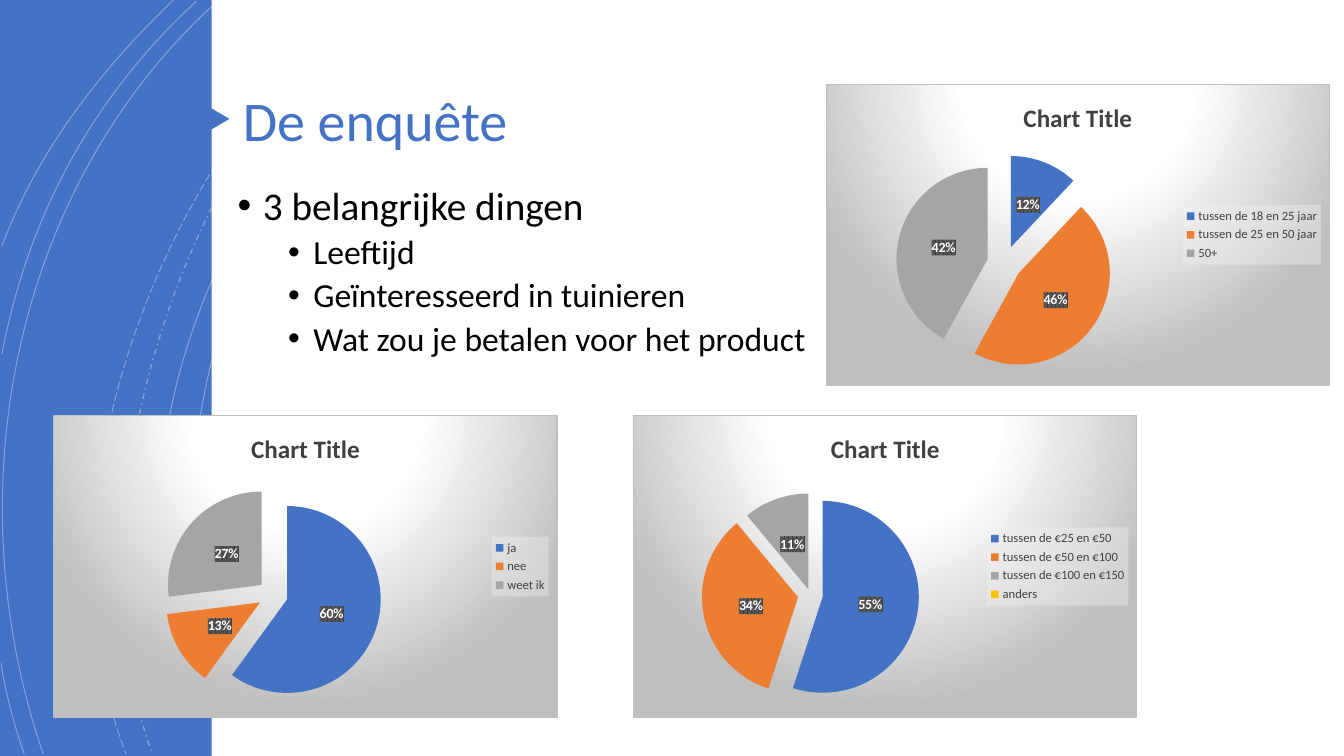
from dataclasses import dataclass

from lxml.etree import SubElement
from pptx import Presentation
from pptx.chart.data import CategoryChartData as Data
from pptx.dml.color import RGBColor as RGB
from pptx.enum.chart import XL_CHART_TYPE as Kind, XL_LABEL_POSITION as Spot
from pptx.enum.chart import XL_LEGEND_POSITION as Side
from pptx.enum.dml import MSO_LINE as Dash
from pptx.enum.shapes import MSO_SHAPE as Form
from pptx.enum.text import MSO_ANCHOR as Anchor
from pptx.oxml import parse_xml
from pptx.oxml.ns import nsdecls, qn
from pptx.util import Inches, Pt


@dataclass(frozen=True)
class Theme:
    font: str = "Calibri"
    blue: str = "4472C4"
    white: str = "FFFFFF"
    black: str = "000000"
    dark: str = "404040"
    hatch: str = "595959"
    pale: str = "F2F2F2"
    edge: str = "BFBFBF"
    slices: tuple = ("4472C4", "ED7D31", "A5A5A5", "FFC000")
    title: int = 40
    levels: tuple = (28, 24)
    head: int = 18
    label: int = 10
    legend: int = 9


T = Theme()

# Four Bezier points, dash and width of each arc
ARCS = [
    ([(4.51, 0), (2.31, 1.38), (0.97, 5.33), (2.72, 7.48)], Dash.SOLID, 0.75),
    ([(4.27, 0), (2.17, 1.47), (0.53, 5.29), (2.41, 7.48)], Dash.SOLID, 0.75),
    ([(3.63, 0), (1.76, 1.66), (0.65, 5.09), (1.51, 7.48)], Dash.DASH_DOT, 1),
    ([(3.51, 0), (1.57, 1.69), (0.29, 4.99), (1.25, 7.48)], Dash.LONG_DASH, 0.75),
    ([(2.17, 0), (0.11, 1.85), (-0.46, 4.9), (0.43, 7.48)], Dash.SOLID, 0.75),
    ([(1.95, 0.01), (0.92, 0.96), (0.28, 2.14), (0.02, 3.51)], Dash.SOLID, 0.75),
    ([(0.01, 6.58), (0.06, 6.89), (0.14, 7.19), (0.24, 7.48)], Dash.SOLID, 0.75),
    ([(1.72, 0), (1, 0.69), (0.37, 1.5), (0.02, 2.44)], Dash.SOLID, 0.75),
]

ITEMS = [
    (0, "3 belangrijke dingen"),
    (1, "Leeftijd"),
    (1, "Geïnteresseerd in tuinieren"),
    (1, "Wat zou je betalen voor het product"),
]

# Box, slices as (name, value, explosion)
PIES = [
    ((0.53, 4.12, 5, 3),
     [("ja", 60, 16), ("nee", 13, 16), ("weet ik", 27, 16)]),
    ((8.19, 0.83, 5, 3),
     [("tussen de 18 en 25 jaar", 12, 19), ("tussen de 25 en 50 jaar", 46, 19),
      ("50+", 42, 19)]),
    ((6.28, 4.12, 5, 3),
     [("tussen de €25 en €50", 55, 13), ("tussen de €50 en €100", 34, 13),
      ("tussen de €100 en €150", 11, 6), ("anders", 0, 0)]),
]


def style(font, size, color, bold=False):
    font.name, font.size, font.bold = T.font, Pt(size), bold
    font.color.rgb = RGB.from_string(color)


def block(slide, form, box, color, turn=0):
    shape = slide.shapes.add_shape(form, *map(Inches, box))
    shape.shadow.inherit = False
    shape.fill.solid()
    shape.fill.fore_color.rgb = RGB.from_string(color)
    shape.line.fill.background()
    shape.rotation = turn


def arc(slide, points, dash, width):
    """Draw one cubic Bezier curve as a faint white line."""
    start, *rest = [(Inches(x), Inches(y)) for x, y in points]
    build = slide.shapes.build_freeform(*start)
    build.add_line_segments(rest, close=False)
    shape = build.convert_to_shape()
    shape.shadow.inherit = False
    shape.fill.background()
    line = shape.line
    line.width, line.dash_style = Pt(width), dash
    line.color.rgb = RGB.from_string(T.white)
    root = shape._element
    tint = root.find(f".//{qn('a:ln')}//{qn('a:srgbClr')}")
    SubElement(tint, qn("a:alpha"), val="35000")
    steps = root.findall(f".//{qn('a:lnTo')}")
    curve = SubElement(steps[0].getparent(), qn("a:cubicBezTo"))
    for step in steps:
        curve.append(step[0])
        step.getparent().remove(step)


def frame(slide, box):
    text = slide.shapes.add_textbox(*map(Inches, box)).text_frame
    text.word_wrap = True
    text.vertical_anchor = Anchor.TOP
    return text


def write(para, words, size, color):
    run = para.add_run()
    run.text = words
    para.line_spacing = 0.9
    style(run.font, size, color)


def bullets(slide, box):
    text = frame(slide, box)
    for i, (level, words) in enumerate(ITEMS):
        para = text.add_paragraph() if i else text.paragraphs[0]
        para.level = level
        para.space_before = Pt(5 if level else 10)
        write(para, words, T.levels[level], T.black)
        props = para._p.get_or_add_pPr()
        props.set("marL", str(Inches(0.25 + 0.5 * level)))
        props.set("indent", str(Inches(-0.25)))
        SubElement(props, qn("a:buFont"), typeface="Arial")
        SubElement(props, qn("a:buChar"), char="•")


def paint(inner):
    """Wrap fill and line markup as chart shape properties."""
    return parse_xml(f"<c:spPr {nsdecls('c', 'a')}>{inner}</c:spPr>")


def tint(color):
    return f'<a:srgbClr val="{color}"/>'


def backdrop(chart):
    stops = [(0, T.white), (39000, T.white), (100000, T.edge)]
    marks = "".join(f'<a:gs pos="{pos}">{tint(color)}</a:gs>' for pos, color in stops)
    fill = (f'<a:gradFill><a:gsLst>{marks}</a:gsLst><a:path path="circle">'
            '<a:fillToRect l="50000" t="-80000" r="50000" b="180000"/>'
            '</a:path></a:gradFill>')
    line = f'<a:ln w="{Pt(0.75)}"><a:solidFill>{tint(T.edge)}</a:solidFill></a:ln>'
    chart._chartSpace.find(qn("c:chart")).addnext(paint(fill + line))


def legend(chart):
    chart.has_legend = True
    key = chart.legend
    key.position, key.include_in_layout = Side.RIGHT, False
    style(key.font, T.legend, T.dark)
    fill = (f'<a:solidFill><a:srgbClr val="{T.pale}"><a:alpha val="39000"/>'
            '</a:srgbClr></a:solidFill>')
    key._element.find(qn("c:txPr")).addprevious(paint(fill))


def labels(plot, values):
    plot.has_data_labels = True
    tags = plot.data_labels
    tags.show_percentage, tags.show_value = True, False
    tags.number_format, tags.number_format_is_linked = "0%", False
    tags.position = Spot.CENTER
    style(tags.font, T.label, T.white, True)
    root = tags._element
    fill = (f'<a:pattFill prst="pct75"><a:fgClr>{tint(T.dark)}</a:fgClr>'
            f'<a:bgClr>{tint(T.hatch)}</a:bgClr></a:pattFill>')
    root.find(qn("c:txPr")).addprevious(paint(fill))
    for i, value in enumerate(values):
        if not value:
            root.insert(0, parse_xml(
                f'<c:dLbl {nsdecls("c")}><c:idx val="{i}"/>'
                '<c:delete val="1"/></c:dLbl>'))


def pie(slide, box, parts):
    names, values, gaps = zip(*parts)
    data = Data()
    data.categories = names
    data.add_series("Series 1", values)
    chart = slide.shapes.add_chart(Kind.PIE, *map(Inches, box), data).chart
    style(chart.font, T.label, T.black)
    backdrop(chart)
    chart.has_title = True
    run = chart.chart_title.text_frame.paragraphs[0].add_run()
    run.text = "Chart Title"
    style(run.font, T.head, T.dark, True)
    chart.chart_title.include_in_layout = False
    legend(chart)
    plot = chart.plots[0]
    plot.vary_by_categories = True
    series = plot.series[0]
    for i, color in enumerate(T.slices[:len(parts)]):
        fill = series.points[i].format.fill
        fill.solid()
        fill.fore_color.rgb = RGB.from_string(color)
    for node, gap in zip(series._element.findall(qn("c:dPt")), gaps):
        node.insert(1, parse_xml(f'<c:explosion {nsdecls("c")} val="{gap}"/>'))
    labels(plot, values)


def main():
    deck = Presentation()
    deck.slide_width, deck.slide_height = Inches(13.33), Inches(7.5)
    slide = deck.slides.add_slide(deck.slide_layouts[6])
    block(slide, Form.RECTANGLE, (0, 0, 13.33, 7.5), T.blue)
    for curve in ARCS:
        arc(slide, *curve)
    block(slide, Form.RECTANGLE, (2.1, 0, 11.23, 7.5), T.white)
    title = frame(slide, (2.31, 0.87, 6.81, 1.35))
    write(title.paragraphs[0], "De enquête", T.title, T.blue)
    block(slide, Form.ISOSCELES_TRIANGLE, (1.97, 1.04, 0.33, 0.28), T.blue, 90)
    bullets(slide, (2.26, 1.8, 11, 4.76))
    for box, parts in PIES:
        pie(slide, box, parts)
    deck.save("out.pptx")


if __name__ == "__main__":
    main()
